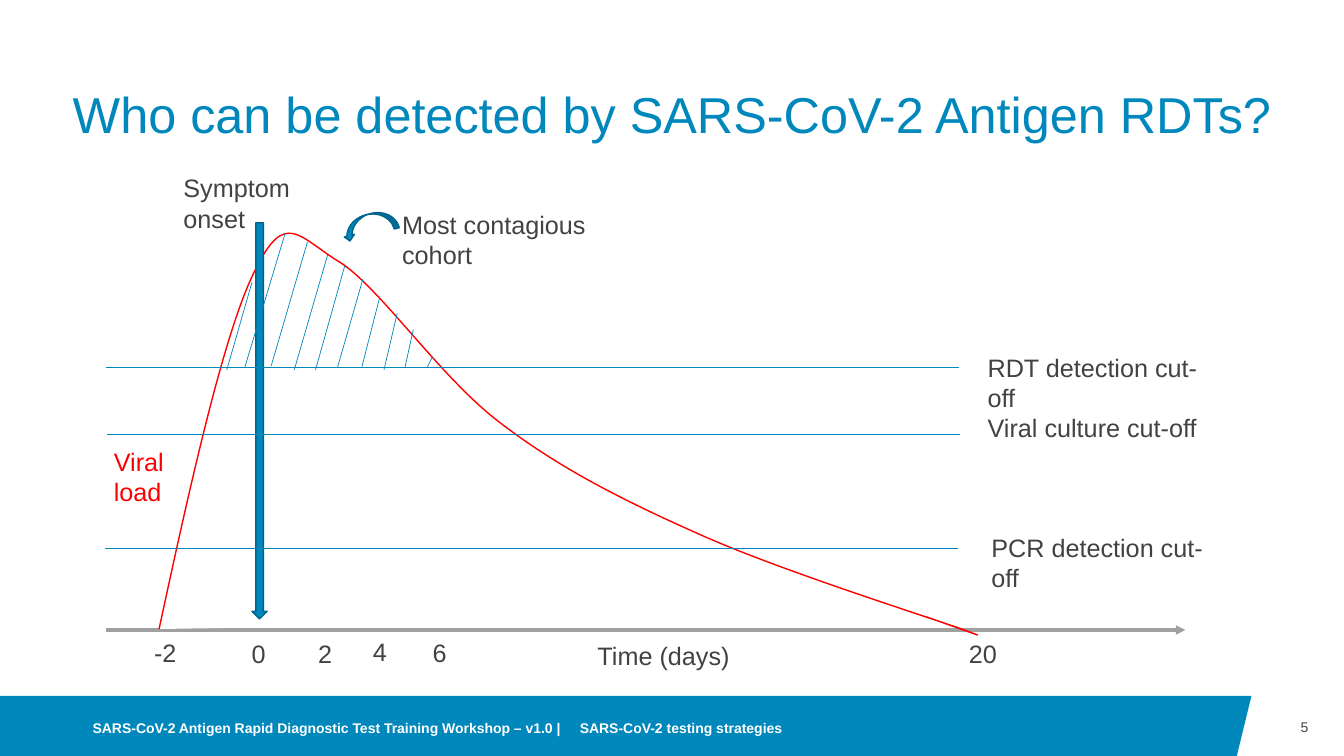
from lxml.etree import SubElement
from pptx import Presentation
from pptx.dml.color import RGBColor
from pptx.enum.shapes import MSO_CONNECTOR, MSO_SHAPE
from pptx.enum.text import MSO_ANCHOR, PP_ALIGN
from pptx.oxml.ns import qn
from pptx.util import Pt

BLUE = RGBColor(0x00, 0x87, 0xBC)
NAVY = RGBColor(0x00, 0x64, 0x8B)
DARK = RGBColor(0x42, 0x42, 0x42)
GRAY = RGBColor(0xA0, 0xA0, 0xA0)
RED = RGBColor(0xFF, 0x00, 0x00)
WHITE = RGBColor(0xFF, 0xFF, 0xFF)

deck = Presentation()
deck.slide_width, deck.slide_height = Pt(960), Pt(540)
slide = deck.slides.add_slide(deck.slide_layouts[6])
shapes = slide.shapes


def add_text(text, x, y, w, h=29, size=18, color=DARK, anchor=None):
    box = shapes.add_textbox(Pt(x), Pt(y), Pt(w), Pt(h))
    frame = box.text_frame
    frame.word_wrap = True
    if anchor is not None:
        frame.vertical_anchor = anchor
        frame.margin_left = frame.margin_right = 0
        frame.margin_top = frame.margin_bottom = 0
    par = frame.paragraphs[0]
    par.text = text
    par.font.name, par.font.size = "Arial", Pt(size)
    par.font.color.rgb = color
    return par


def add_line(x1, y1, x2, y2, color=BLUE, width=0.5):
    line = shapes.add_connector(
        MSO_CONNECTOR.STRAIGHT, Pt(x1), Pt(y1), Pt(x2), Pt(y2))
    line.line.color.rgb, line.line.width = color, Pt(width)
    SubElement(line._element.spPr, qn("a:effectLst"))
    return line


# Footer band
pen = shapes.build_freeform(0, Pt(497))
pen.add_line_segments([(Pt(894), Pt(497)), (Pt(883), Pt(542)), (0, Pt(542))])
band = pen.convert_to_shape()
band.shadow.inherit = False
band.fill.solid()
band.fill.fore_color.rgb = BLUE
band.line.fill.background()

# Title and page number
title = add_text("Who can be detected by SARS-CoV-2 Antigen RDTs?",
                 52, 29, 870, 74, 36, BLUE, MSO_ANCHOR.BOTTOM)
title.line_spacing = 0.9
page = add_text("5", 894, 497, 40.5, 45, 10, DARK, MSO_ANCHOR.MIDDLE)
page.alignment = PP_ALIGN.RIGHT

# Time axis
axis = add_line(75.6, 450, 846.7, 450, GRAY, 2.25)
SubElement(axis.line._get_or_add_ln(), qn("a:tailEnd"), type="triangle")
add_text("Time (days)", 419.7, 453.6, 142.5)

# Viral load curve: the frame first, then its Bezier pieces
LEFT, TOP, RIGHT, BASE = 113.6, 166.3, 698.2, 453.6
pen = shapes.build_freeform(Pt(LEFT), Pt(TOP))
pen.add_line_segments([(Pt(RIGHT), Pt(BASE))], close=False)
curve = pen.convert_to_shape()
curve.shadow.inherit = False
curve.fill.solid()
curve.fill.fore_color.rgb = WHITE
curve.line.color.rgb, curve.line.width = RED, Pt(1)
track = next(curve._element.iter(qn("a:path")))
for part in list(track):
    track.remove(part)
for tag, dots in [
        ("a:moveTo", [(113.6, 449.3)]),
        ("a:cubicBezTo", [(136.6, 342.7), (160.4, 236.2), (182.2, 193)]),
        ("a:cubicBezTo", [(203.8, 149), (213.1, 169.2), (242.6, 187.2)]),
        ("a:cubicBezTo", [(271.4, 205.2), (314.6, 270), (357.8, 302.4)]),
        ("a:cubicBezTo", [(400.3, 334.8), (445.7, 357.8), (501.1, 382.3)]),
        ("a:cubicBezTo", [(555.8, 406.8), (660.2, 439.9), (686.9, 449.3)]),
        ("a:cubicBezTo", [(714.2, 459.4), (688.3, 450), (661.7, 440.6)])]:
    piece = SubElement(track, qn(tag))
    for x, y in dots:
        SubElement(piece, qn("a:pt"),
                   x=str(Pt(x - LEFT)), y=str(Pt(y - TOP)))

# Onset arrow and curved pointer
for kind, x, y, w, h, turn in [
        (MSO_SHAPE.RIGHT_ARROW, 43.9, 295.2, 283, 10.8, 90),
        (MSO_SHAPE.CURVED_RIGHT_ARROW, 256.3, 140.4, 15.1, 40.3, 74.9)]:
    arrow = shapes.add_shape(kind, Pt(x), Pt(y), Pt(w), Pt(h))
    arrow.rotation = turn
    arrow.shadow.inherit = False
    arrow.fill.solid()
    arrow.fill.fore_color.rgb = BLUE
    arrow.line.color.rgb, arrow.line.width = NAVY, Pt(1)

# Labels
for text, x, y, w in [
        ("Symptom onset", 124, 119.8, 130),
        ("4", 259.2, 451, 21), ("2", 220.1, 452.4, 21),
        ("0", 172.6, 452.5, 21), ("-2", 103, 451.4, 36),
        ("6", 302, 452, 21), ("20", 685, 452.4, 47),
        ("Most contagious cohort", 280.2, 145.9, 199)]:
    add_text(text, x, y, w)
add_text("Viral load", 74.2, 315.4, 72.7, 51, color=RED)

# Cut-off levels
for label, left, y, x, top, w in [
        ("RDT detection cut-off", 75.6, 262.3, 698.4, 248, 172.8),
        ("PCR detection cut-off", 75.2, 391.7, 701.1, 376.6, 172),
        ("Viral culture cut-off", 76.3, 310.3, 698.4, 290.9, 166)]:
    add_line(left, y, left + 609.3, y)
    add_text(label, x, top, w)

# Hatching of the contagious phase
for ends in [(180, 201.6, 162, 264.2), (203.8, 166.3, 175, 262),
             (219.6, 172.8, 193.7, 261.4), (234, 182.2, 210.2, 264.2),
             (246.2, 190.1, 225.4, 264.2), (259.2, 199.4, 241.2, 262),
             (271.4, 211.7, 258.5, 262), (283.7, 223.9, 274.3, 264.2),
             (295.2, 235.4, 289.4, 262), (308.9, 254.9, 305.3, 262)]:
    add_line(*ends)

# Footer text, split by a tab stop
foot = add_text("SARS-CoV-2 Antigen Rapid Diagnostic Test Training Workshop"
                " – v1.0 |\tSARS-CoV-2 testing strategies",
                66.2, 500.4, 576, 39.6, 10, WHITE, MSO_ANCHOR.MIDDLE)
foot.font.bold = True
props = foot._p.get_or_add_pPr()
tabs = SubElement(props, qn("a:tabLst"))
SubElement(tabs, qn("a:tab"), pos=str(Pt(348)), algn="l")
props.insert(0, tabs)

deck.save("out.pptx")
